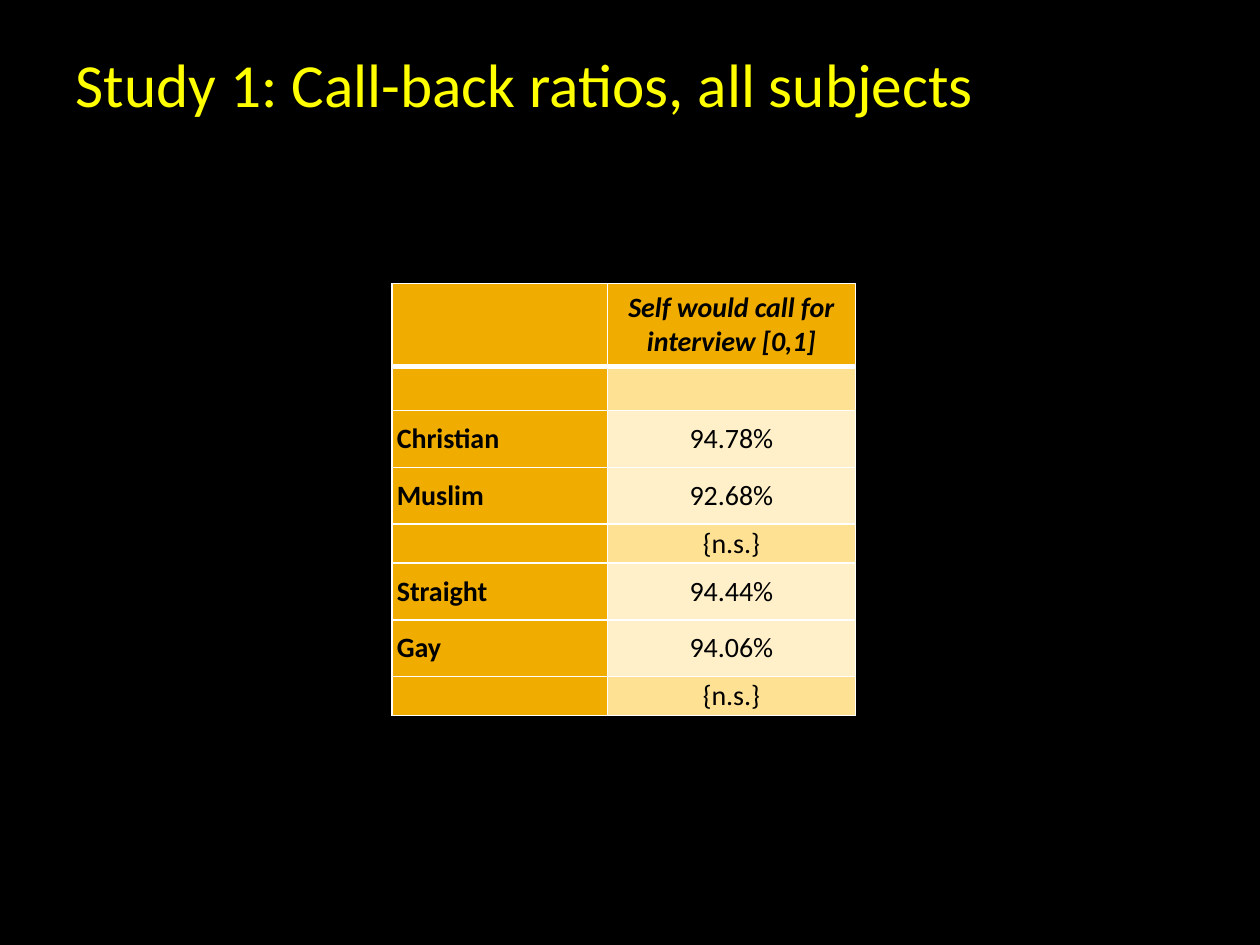
import pptx
import pptx.dml.color
import pptx.enum.text
import pptx.oxml
import pptx.oxml.ns
import pptx.util
from pptx.util import Inches

RGBColor = pptx.dml.color.RGBColor
BLACK = RGBColor(0x00, 0x00, 0x00)
WHITE = RGBColor(0xFF, 0xFF, 0xFF)
YELLOW = RGBColor(0xFF, 0xFF, 0x00)
AMBER = RGBColor(0xF0, 0xAD, 0x00)
BAND = RGBColor(0xFF, 0xE1, 0x93)
PALE = RGBColor(0xFF, 0xF0, 0xC9)

ROWS = [
    ("", "Self would call for interview [0,1]", 0.66),
    ("", "", 0.35),
    ("Christian", "94.78%", 0.45),
    ("Muslim", "92.68%", 0.45),
    ("", "{n.s.}", 0.31),
    ("Straight", "94.44%", 0.45),
    ("Gay", "94.06%", 0.45),
    ("", "{n.s.}", 0.31),
]
COLUMN_WIDTHS = (1.71, 1.97)


class SlideBuilder:
    """Hold the slide and its style, and add each kind of element."""

    font_name = "Calibri"
    align = pptx.enum.text.PP_ALIGN
    middle = pptx.enum.text.MSO_ANCHOR.MIDDLE

    def __init__(self, presentation):
        self.slide = presentation.slides.add_slide(presentation.slide_layouts[5])
        self.slide.background.fill.solid()
        self.slide.background.fill.fore_color.rgb = BLACK

    def style(self, paragraph, size, color, align, bold=False, italic=False):
        paragraph.alignment = align
        font = paragraph.font
        font.name, font.size = self.font_name, pptx.util.Pt(size)
        font.bold, font.italic = bold, italic
        font.color.rgb = color

    def title(self, text, left, top, width, height):
        shape = self.slide.shapes.title
        shape.left, shape.top = Inches(left), Inches(top)
        shape.width, shape.height = Inches(width), Inches(height)
        frame = shape.text_frame
        frame.text = text
        frame.vertical_anchor = self.middle
        frame.margin_left = Inches(0.1)
        frame.margin_right = frame.margin_top = frame.margin_bottom = Inches(0.05)
        self.style(frame.paragraphs[0], 35, YELLOW, self.align.LEFT)

    def borders(self, cell, top, bottom):
        properties = cell._tc.get_or_add_tcPr()
        sides = (("L", 1), ("R", 1), ("T", top), ("B", bottom))
        for position, (side, points) in enumerate(sides):
            properties.insert(position, pptx.oxml.parse_xml(
                f'<a:ln{side} {pptx.oxml.ns.nsdecls("a")} w="{pptx.util.Pt(points)}">'
                f'<a:solidFill><a:srgbClr val="{WHITE}"/></a:solidFill></a:ln{side}>'))

    def cell(self, cell, text, fill, align, bold, italic):
        cell.text = text
        cell.vertical_anchor = self.middle
        cell.margin_left = cell.margin_right = Inches(0.04)
        cell.margin_top = cell.margin_bottom = 0
        cell.fill.solid()
        cell.fill.fore_color.rgb = fill
        self.style(cell.text_frame.paragraphs[0], 16, BLACK, align, bold, italic)

    def table(self, rows, column_widths, left, top):
        height = sum(row[-1] for row in rows)
        table = self.slide.shapes.add_table(
            len(rows), len(column_widths), Inches(left), Inches(top),
            Inches(sum(column_widths)), Inches(height)).table
        for column, width in zip(table.columns, column_widths):
            column.width = Inches(width)
        for index, (label, value, row_height) in enumerate(rows):
            table.rows[index].height = Inches(row_height)
            header = index == 0
            value_fill = AMBER if header else PALE if label else BAND
            label_cell, value_cell = table.rows[index].cells
            self.cell(label_cell, label, AMBER, self.align.LEFT, True, False)
            self.cell(value_cell, value, value_fill, self.align.CENTER, header, header)
            for cell in (label_cell, value_cell):
                self.borders(cell, 3 if index == 1 else 1, 3 if header else 1)


def main():
    presentation = pptx.Presentation()
    presentation.slide_width, presentation.slide_height = Inches(10), Inches(7.5)
    builder = SlideBuilder(presentation)
    builder.table(ROWS, COLUMN_WIDTHS, 3.11, 2.25)
    builder.title("Study 1: Call-back ratios, all subjects", 0.5, 0.17, 9, 0.98)
    presentation.save("out.pptx")


if __name__ == "__main__":
    main()
